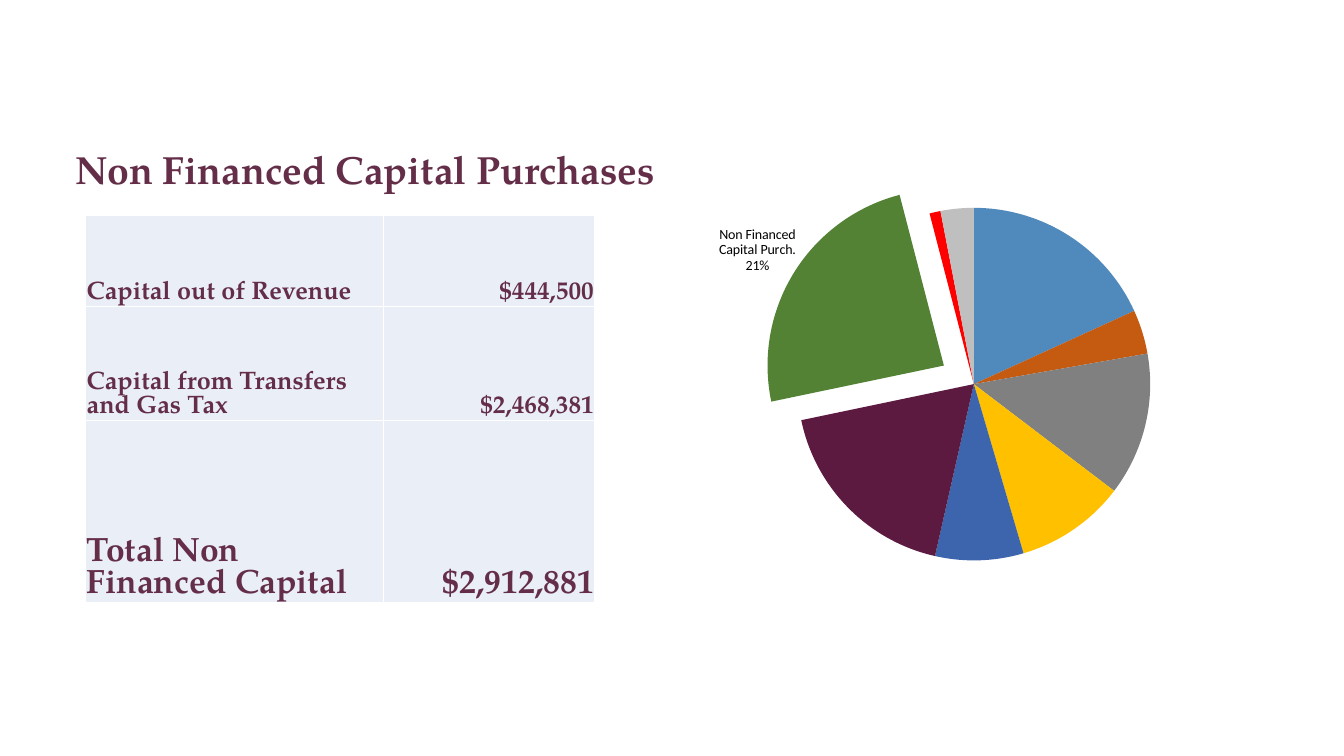
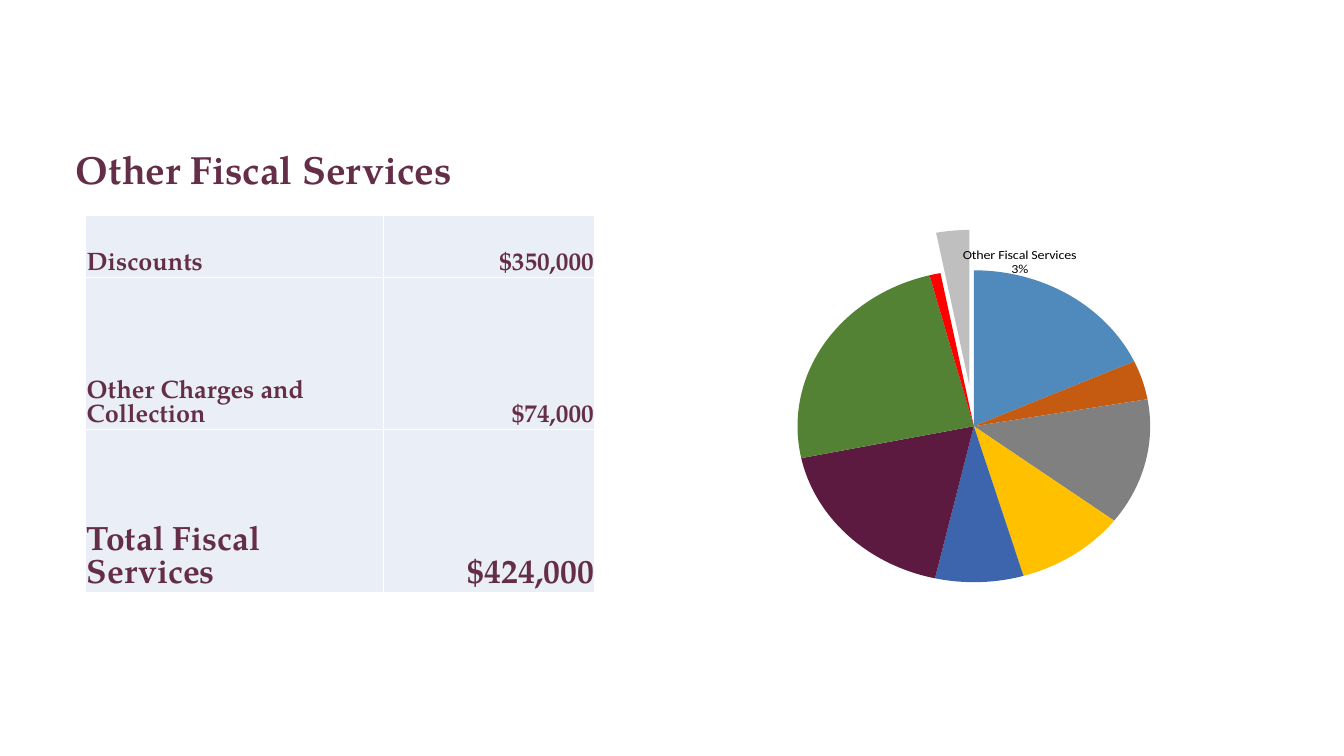
"""Build two budget slides, each with a title, a table and a pie."""
from dataclasses import dataclass

from lxml import etree
from pptx import Presentation
from pptx.chart.data import CategoryChartData
from pptx.dml.color import RGBColor
from pptx.enum.chart import XL_CHART_TYPE, XL_LABEL_POSITION
from pptx.enum.text import MSO_ANCHOR, MSO_AUTO_SIZE, PP_ALIGN
from pptx.oxml import parse_xml
from pptx.oxml.ns import nsdecls, qn
from pptx.util import Inches, Pt

PIE = XL_CHART_TYPE.PIE
OUTER = XL_LABEL_POSITION.OUTSIDE_END
MIDDLE, BOTTOM = MSO_ANCHOR.MIDDLE, MSO_ANCHOR.BOTTOM
LEFT, RIGHT = PP_ALIGN.LEFT, PP_ALIGN.RIGHT
FIXED = MSO_AUTO_SIZE.NONE
EXT_ID = "{CE6537A1-D6FC-4f65-9D91-7224C49458BB}"
EXT_NS = "http://schemas.microsoft.com/office/drawing/2012/chart"


@dataclass(frozen=True)
class Theme:
    ink: str = "642E48"
    cell: str = "EAEFF7"
    rule: str = "FFFFFF"
    black: str = "000000"
    face: str = "TeX Gyre Pagella"
    label: str = "Calibri"
    head: int = 28
    total: int = 24
    body: int = 18
    small: int = 10
    pie: tuple = ("508ABC", "C55A11", "808080", "FFC000", "3D65AD",
                  "5C1A41", "548235", "FF0000", "BFBFBF")


THEME = Theme()
WIDE, HIGH = Inches(13.33), Inches(7.5)
COL, ROW = WIDE / 100, HIGH / 100
WIDTHS = (22.13, 15.75)
SHARES = (18, 4, 13, 10, 8, 18, 24, 1, 3)

SLIDES = [
    dict(
        title="Non Financed Capital Purchases",
        rows=[
            ("Capital out of Revenue", "$444,500", 12),
            ("Capital from Transfers and Gas Tax", "$2,468,381", 15.07),
            ("Total Non Financed Capital", "$2,912,881", 24.13),
        ],
        top=24.27, slice=6, burst=20, shift=(0.01, 0.01),
        name="Non Financed Capital Purch.", share="21%",
    ),
    dict(
        title="Other Fiscal Services",
        rows=[
            ("Discounts", "$350,000", 8.13),
            ("Other Charges and Collection", "$74,000", 20.13),
            ("Total Fiscal Services", "$424,000", 21.6),
        ],
        top=26.13, slice=8, burst=26, shift=(0.18, 0.13),
        name="Other Fiscal Services", share=None,
    ),
]


def write(para, text, size, face=THEME.face, color=THEME.ink, bold=True):
    run = para.add_run()
    run.text = text
    font = run.font
    font.name, font.size, font.bold = face, Pt(size), bold
    font.color.rgb = RGBColor.from_string(color)


def place(**spots):
    tags = "".join(f'<c:{key} val="{val}"/>' for key, val in spots.items())
    return parse_xml(
        f'<c:layout {nsdecls("c")}><c:manualLayout>{tags}'
        "</c:manualLayout></c:layout>"
    )


deck = Presentation()
deck.slide_width, deck.slide_height = WIDE, HIGH

for page in SLIDES:
    slide = deck.slides.add_slide(deck.slide_layouts[5])

    title = slide.shapes.title
    title.left, title.top = int(4.88 * COL), int(19.2 * ROW)
    title.width, title.height = int(44.94 * COL), int(6.93 * ROW)
    frame = title.text_frame
    frame.auto_size, frame.word_wrap = FIXED, True
    frame.vertical_anchor = MIDDLE
    para = frame.paragraphs[0]
    para.alignment, para.line_spacing = LEFT, 0.9
    write(para, page["title"], THEME.head)

    rows = page["rows"]
    table = slide.shapes.add_table(
        len(rows), len(WIDTHS), int(6.38 * COL), int(28.53 * ROW),
        int(sum(WIDTHS) * COL), int(sum(row[-1] for row in rows) * ROW),
    ).table
    for col, width in zip(table.columns, WIDTHS):
        col.width = int(width * COL)
    for y, (name, cost, height) in enumerate(rows):
        table.rows[y].height = int(height * ROW)
        size = THEME.total if y == len(rows) - 1 else THEME.body
        for x, (text, align) in enumerate(((name, LEFT), (cost, RIGHT))):
            cell = table.cell(y, x)
            cell.vertical_anchor = BOTTOM
            cell.margin_left = cell.margin_right = Inches(0.01)
            cell.margin_top, cell.margin_bottom = Inches(0.01), 0
            para = cell.text_frame.paragraphs[0]
            para.alignment = align
            write(para, text, size)
            props = cell._tc.get_or_add_tcPr()
            for side in ("lnL", "lnR", "lnT", "lnB"):
                line = etree.SubElement(props, qn(f"a:{side}"), w=str(Pt(1)))
                paint = etree.SubElement(line, qn("a:solidFill"))
                etree.SubElement(paint, qn("a:srgbClr"), val=THEME.rule)
            cell.fill.solid()
            cell.fill.fore_color.rgb = RGBColor.from_string(THEME.cell)

    pick = page["slice"]
    data = CategoryChartData()
    data.categories = [
        page["name"] if i == pick else "" for i in range(len(SHARES))
    ]
    data.add_series("", SHARES)
    chart = slide.shapes.add_chart(
        PIE, int(48.61 * COL), int(page["top"] * ROW),
        int(51.46 * COL), int(58.67 * ROW), data,
    ).chart
    chart.has_legend = chart.has_title = False
    chart.font.name, chart.font.size = THEME.label, Pt(THEME.small)
    chart.font.color.rgb = RGBColor.from_string(THEME.black)

    area = chart._chartSpace.find(".//" + qn("c:plotArea"))
    for old in area.findall(qn("c:layout")):
        area.remove(old)
    area.insert(0, place(layoutTarget="inner", xMode="edge", yMode="edge",
                         x=0.051, y=0.055, w=0.825, h=0.795))

    series = chart.plots[0].series[0]
    for i, color in enumerate(THEME.pie):
        fill = series.points[i].format.fill
        fill.solid()
        fill.fore_color.rgb = RGBColor.from_string(color)
    shape = series._element.findall(qn("c:dPt"))[pick]
    burst = etree.Element(qn("c:explosion"), val=str(page["burst"]))
    shape.find(qn("c:spPr")).addprevious(burst)

    labels = series.data_labels
    labels.show_value = labels.show_percentage = False
    labels.show_category_name = False
    for lead in series._element.iter(qn("c:showLeaderLines")):
        lead.set("val", "0")
    label = series.points[pick].data_label
    if page["share"]:
        frame = label.text_frame
        frame.word_wrap = True
        for i, text in enumerate((page["name"], page["share"])):
            para = frame.add_paragraph() if i else frame.paragraphs[0]
            write(para, text, THEME.small, THEME.label, THEME.black, False)
    else:
        label.font.name, label.font.size = THEME.label, Pt(THEME.small)
        label.font.color.rgb = RGBColor.from_string(THEME.black)
    label.position = OUTER

    tag = series._element.find(".//" + qn("c:dLbl"))
    x, y = page["shift"]
    tag.find(qn("c:idx")).addnext(place(x=x, y=y))
    for key, val in (("Val", 0), ("CatName", 1), ("Percent", 1)):
        tag.find(qn(f"c:show{key}")).set("val", str(val))
    split = etree.Element(qn("c:separator"))
    split.text = "\n"
    flags = [kid for kid in tag if kid.tag.startswith(qn("c:show"))]
    flags[-1].addnext(split)
    if page["share"]:
        more = etree.SubElement(tag, qn("c:extLst"))
        ext = etree.SubElement(more, qn("c:ext"), uri=EXT_ID)
        room = etree.SubElement(ext, f"{{{EXT_NS}}}layout",
                                nsmap={"c15": EXT_NS})
        room.append(place(w=0.2, h=0.13)[0])

deck.save("out.pptx")
